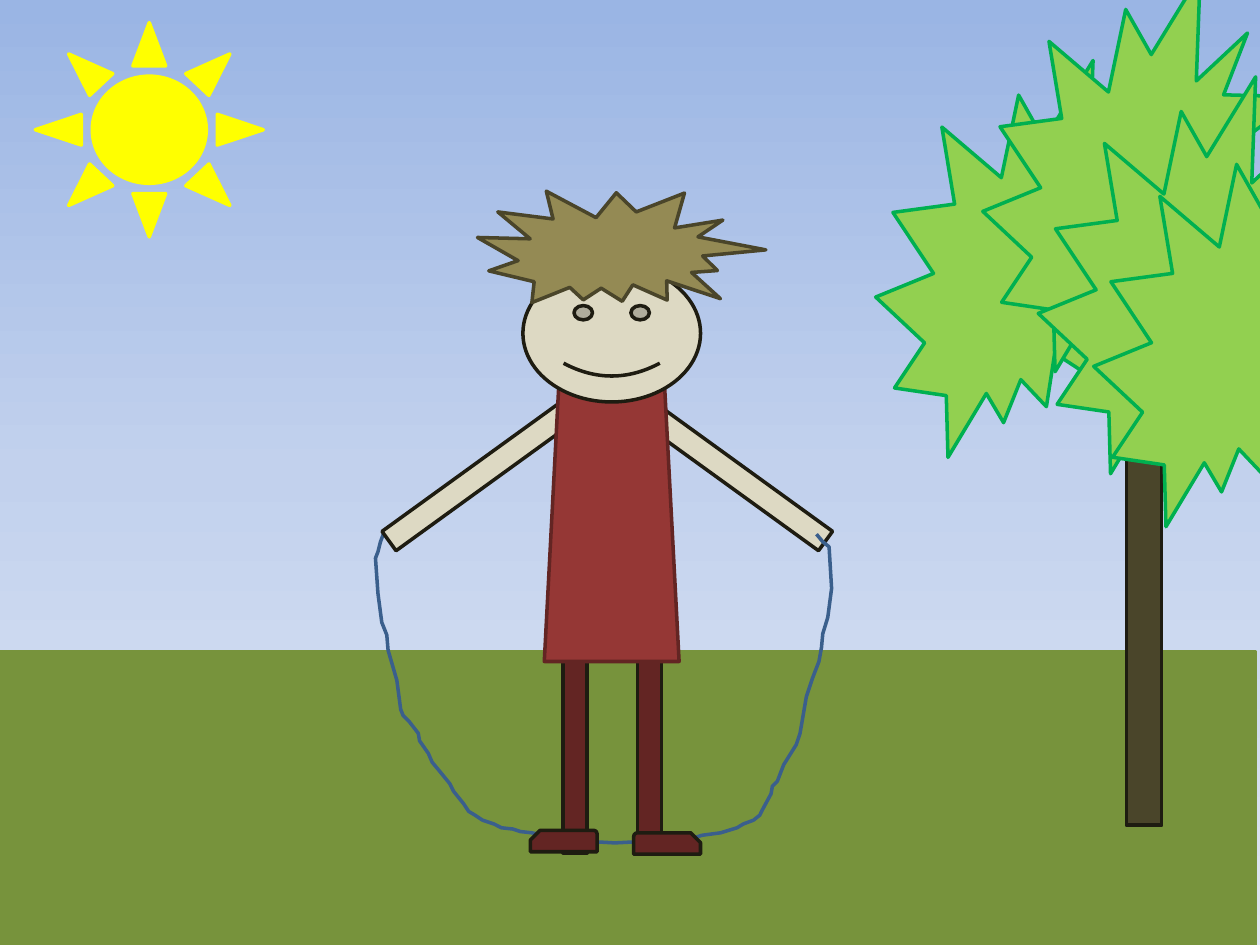
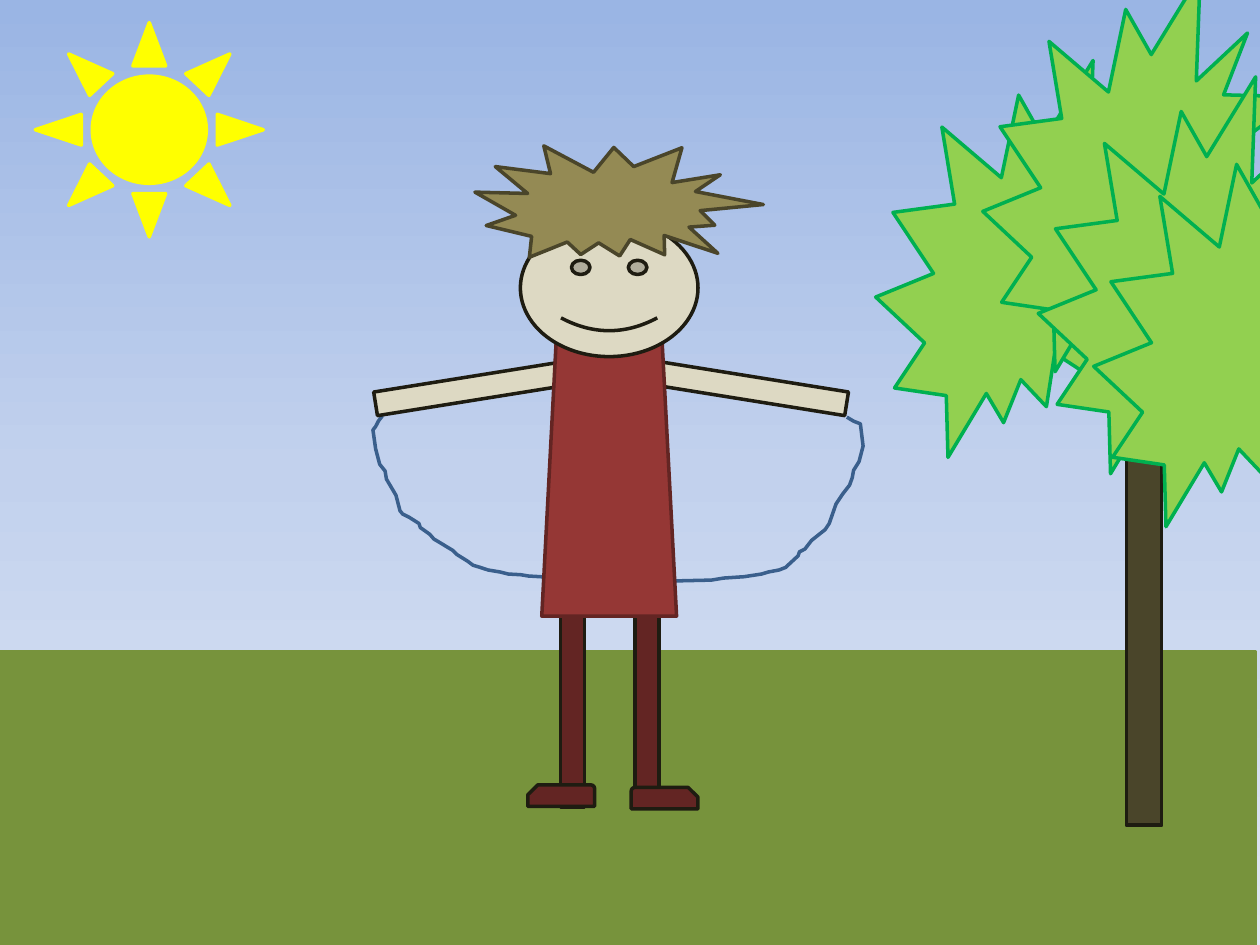
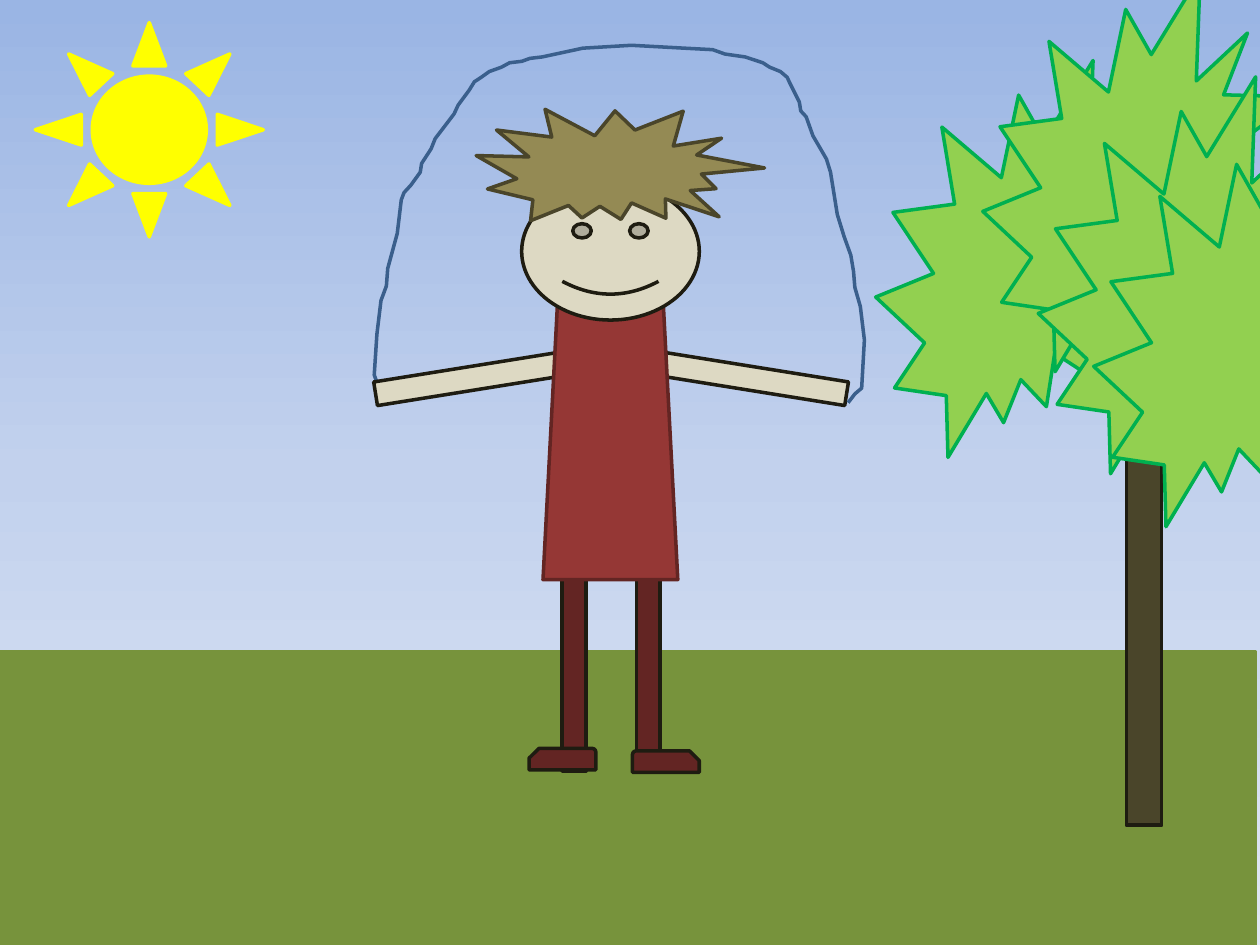
from collections import namedtuple
from copy import deepcopy
from dataclasses import dataclass

from pptx import Presentation
from pptx.dml.color import RGBColor
from pptx.enum.shapes import MSO_SHAPE
from pptx.oxml.ns import qn
from pptx.util import Inches, Pt

COLUMNS, ROWS = 10, 7.5
BLANK_LAYOUT = 6

Box = namedtuple("Box", "left top width height")
Paint = namedtuple("Paint", "fill line")
Pose = namedtuple("Pose", "shift_x shift_y arm_left arm_right arm_top arm_angle rope rope_overhead")


@dataclass(frozen=True)
class Theme:
    """Colours and line width shared by all slides."""

    sky: tuple = ((0, "9AB5E4"), (0.5, "C2D1ED"), (1, "E1E8F5"))
    grass: Paint = Paint("77933C", "77933C")
    sun: Paint = Paint("FFFF00", "FFFF00")
    trunk: Paint = Paint("4A452A", "1E1C11")
    leaves: Paint = Paint("92D050", "00B050")
    skin: Paint = Paint("DDD9C3", "1E1C11")
    hair: Paint = Paint("948A54", "4A452A")
    dress: Paint = Paint("953735", "632523")
    legs: Paint = Paint("632523", "1E1C11")
    rope: Paint = Paint(None, "3A5F8C")
    line_width: Pt = Pt(2)


THEME = Theme()

POSES = (
    Pose(0, 0, 3.71, 5.74, 2.89, 125.9, Box(2.98, 4.22, 3.62, 2.47), False),
    Pose(-0.02, -0.36, 3.76, 5.75, 2.18, 99.1, Box(2.96, 3.3, 3.89, 1.32), False),
    Pose(-0.01, -0.65, 3.76, 5.75, 2.1, 99.1, Box(2.97, 0.36, 3.89, 2.86), True),
)

CROWN_CORNERS = ((6.95, 0.48), (7.8, -0.2), (8.24, 0.61), (8.68, 1.03))

ROPE_GRID = (362, 247)
ROPE_POINTS = (
    (7, 0), (4, 8), (2, 16), (0, 21), (2, 49), (5, 72), (9, 82), (10, 94),
    (17, 118), (20, 141), (22, 146), (27, 151), (34, 160), (35, 166), (42, 176),
    (45, 183), (50, 189), (59, 200), (62, 206), (70, 216), (74, 222), (79, 225),
    (85, 229), (94, 232), (100, 235), (109, 236), (115, 238), (124, 239),
    (149, 244), (154, 245), (190, 247), (229, 245), (250, 244), (259, 241),
    (274, 239), (287, 235), (292, 232), (300, 229), (305, 225), (307, 221),
    (314, 208), (315, 202), (319, 198), (324, 185), (329, 177), (334, 169),
    (337, 160), (342, 131), (347, 116), (352, 103), (354, 92), (355, 81),
    (359, 68), (362, 45), (360, 12), (355, 8), (350, 2),
)


def apply_paint(shape, paint):
    """Give a shape its fill and outline and remove its shadow."""
    shape.shadow.inherit = False
    if paint.fill:
        shape.fill.solid()
        shape.fill.fore_color.rgb = RGBColor.from_string(paint.fill)
    else:
        shape.fill.background()
    shape.line.color.rgb = RGBColor.from_string(paint.line)
    shape.line.width = THEME.line_width


def add_figure(shapes, kind, box, paint, rotation=0, adjustments=(), mirrored=False):
    """Add one painted preset shape."""
    shape = shapes.add_shape(kind, *map(Inches, box))
    for index, value in enumerate(adjustments):
        shape.adjustments[index] = value
    shape.rotation = rotation
    if mirrored:
        shape.element.spPr.xfrm.set("flipH", "1")
    apply_paint(shape, paint)


def paint_sky(master):
    """Set the sky gradient behind every slide."""
    fill = master.background.fill
    fill.gradient()
    fill.gradient_angle = 270
    stop_list = master.element.cSld.find(".//" + qn("a:gsLst"))
    stop_list.append(deepcopy(stop_list[-1]))
    for stop, (position, colour) in zip(fill.gradient_stops, THEME.sky):
        stop.position = position
        stop.color.rgb = RGBColor.from_string(colour)


def add_tree(slide):
    """Add the trunk and its overlapping leaves as a group."""
    shapes = slide.shapes.add_group_shape().shapes
    add_figure(shapes, MSO_SHAPE.RECTANGLE, Box(8.94, 1.64, 0.28, 4.91), THEME.trunk)
    for left, top in CROWN_CORNERS:
        add_figure(shapes, MSO_SHAPE.EXPLOSION2, Box(left, top, 2.52, 3.15), THEME.leaves)


def add_arm(slide, left, top, angle):
    """Add an arm turned by the given angle."""
    add_figure(slide.shapes, MSO_SHAPE.RECTANGLE, Box(left, top, 0.19, 1.77), THEME.skin, angle)


def add_rope(slide, box, overhead):
    """Stretch the rope outline to a box, upside down when overhead."""
    points = []
    for column, row in ROPE_POINTS:
        share = row / ROPE_GRID[1]
        depth = 1 - share if overhead else share
        x = box.left + box.width * column / ROPE_GRID[0]
        y = box.top + box.height * depth
        points.append((Inches(x), Inches(y)))
    builder = slide.shapes.build_freeform(*points[0])
    builder.add_line_segments(points[1:], close=False)
    apply_paint(builder.convert_to_shape(), THEME.rope)


def add_child(slide, shift_x, shift_y):
    """Add legs, dress, head, shoes and hair as a group."""
    shapes = slide.shapes.add_group_shape().shapes

    def place(left, top, width, height):
        """Move a box to where the child stands."""
        return Box(left + shift_x, top + shift_y, width, height)

    for left in (4.47, 5.06):
        add_figure(shapes, MSO_SHAPE.RECTANGLE, place(left, 5.25, 0.19, 1.52), THEME.legs)
    add_figure(shapes, MSO_SHAPE.TRAPEZOID, place(4.32, 2.97, 1.07, 2.28), THEME.dress,
               adjustments=(0.112,))
    add_figure(shapes, MSO_SHAPE.SMILEY_FACE, place(4.15, 2.1, 1.41, 1.09), THEME.skin)
    for left, top, mirrored in ((5.03, 6.61, False), (4.21, 6.59, True)):
        add_figure(shapes, MSO_SHAPE.SNIP_ROUND_RECTANGLE, place(left, top, 0.53, 0.17),
                   THEME.legs, adjustments=(0.167, 0.456), mirrored=mirrored)
    add_figure(shapes, MSO_SHAPE.EXPLOSION2, place(3.79, 1.45, 2.27, 1.07), THEME.hair,
               rotation=10.2)


def add_scene(presentation, pose):
    """Add a slide with the landscape and the child in one pose."""
    slide = presentation.slides.add_slide(presentation.slide_layouts[BLANK_LAYOUT])
    add_figure(slide.shapes, MSO_SHAPE.RECTANGLE, Box(-0.04, 5.17, 10, 2.33), THEME.grass)
    add_arm(slide, pose.arm_right, pose.arm_top, pose.arm_angle)
    add_rope(slide, pose.rope, pose.rope_overhead)
    add_arm(slide, pose.arm_left, pose.arm_top, 360 - pose.arm_angle)
    add_child(slide, pose.shift_x, pose.shift_y)
    add_figure(slide.shapes, MSO_SHAPE.SUN, Box(0.28, 0.18, 1.81, 1.7), THEME.sun)
    add_tree(slide)


def main():
    """Build the rope skipping slides."""
    presentation = Presentation()
    presentation.slide_width = Inches(COLUMNS)
    presentation.slide_height = Inches(ROWS)
    paint_sky(presentation.slide_master)
    for pose in POSES:
        add_scene(presentation, pose)
    presentation.save("out.pptx")


if __name__ == "__main__":
    main()
